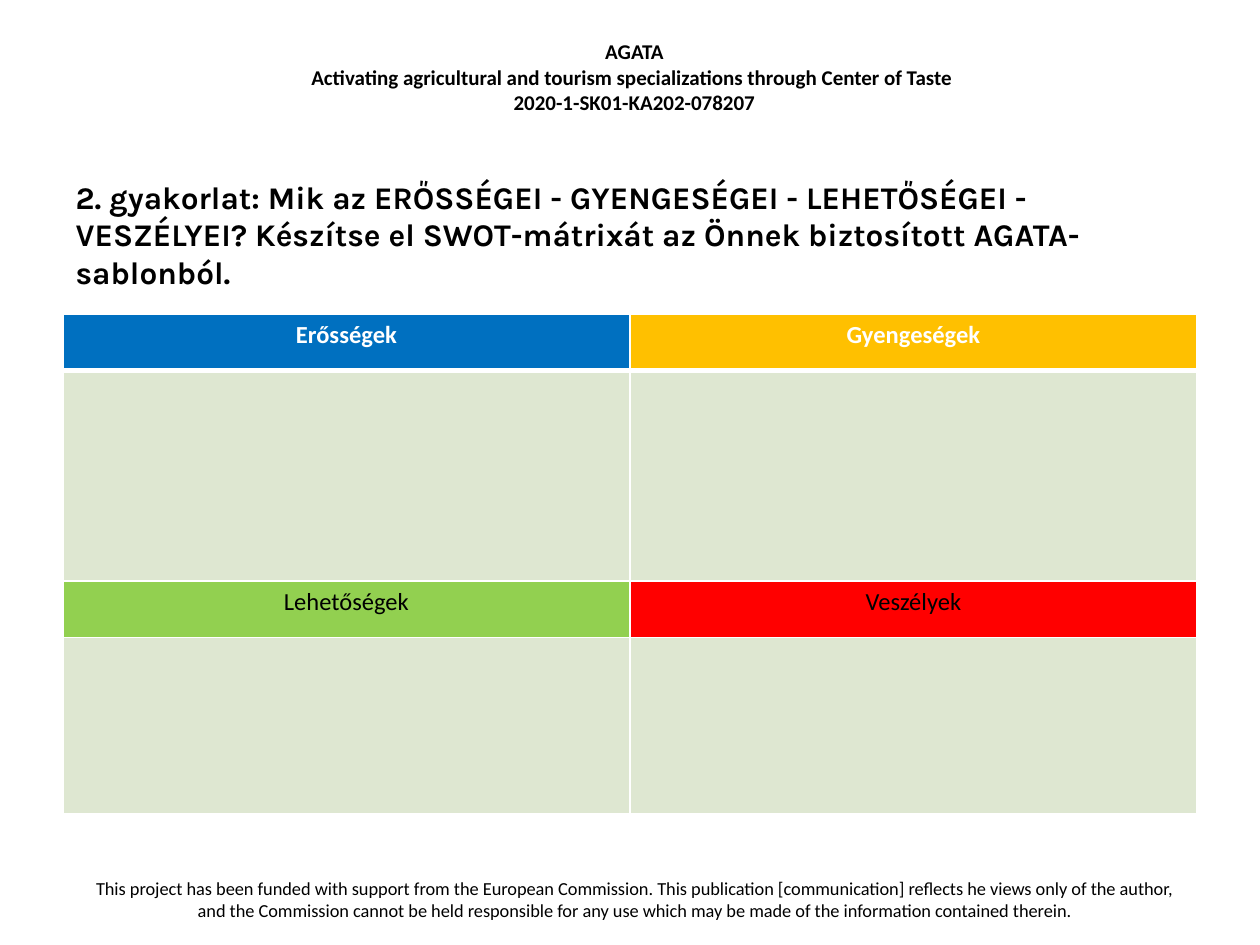
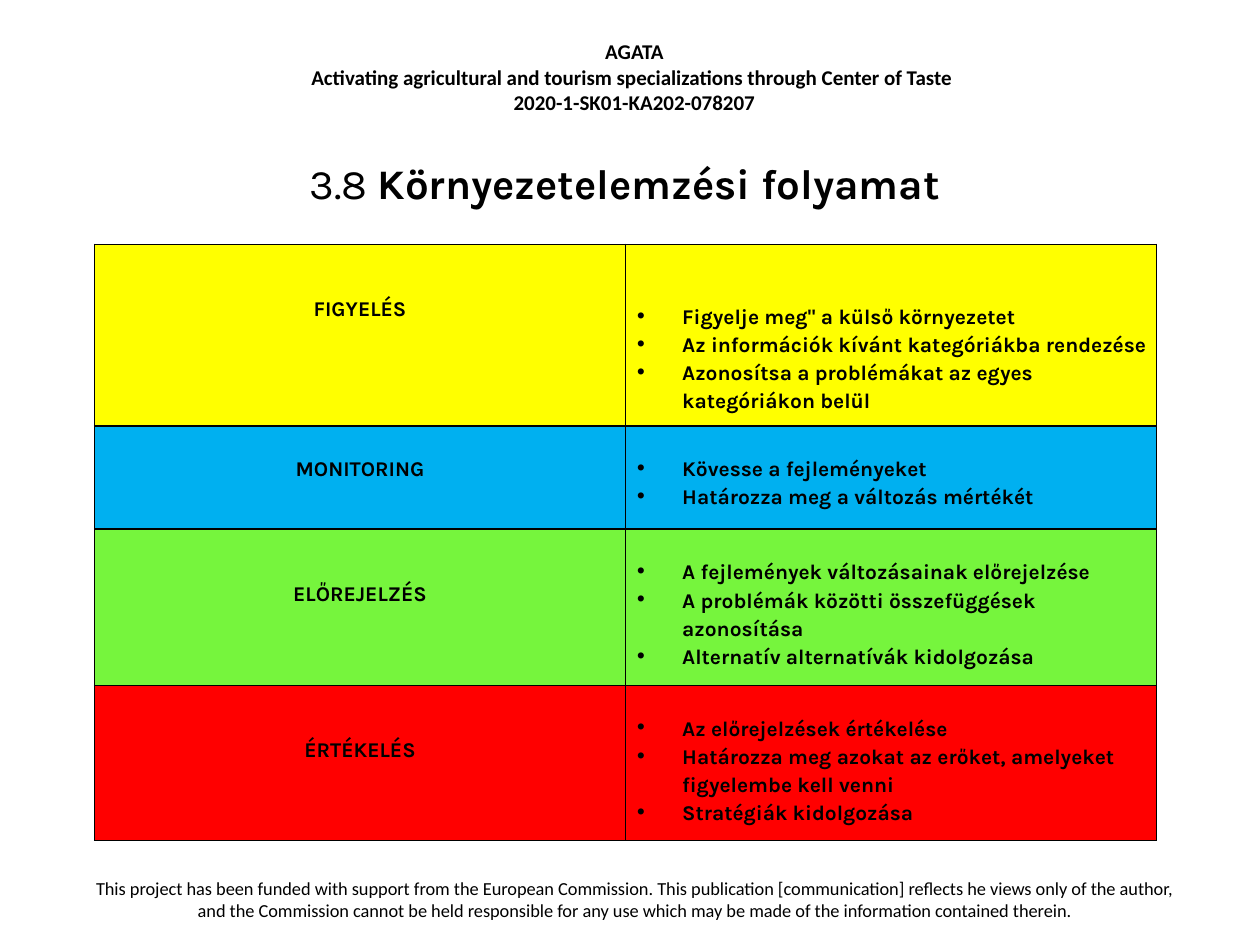
from dataclasses import dataclass

from lxml.etree import SubElement
from pptx import Presentation
from pptx.dml.color import RGBColor
from pptx.enum.text import MSO_ANCHOR, MSO_AUTO_SIZE, PP_ALIGN
from pptx.oxml import parse_xml
from pptx.oxml.ns import nsdecls, qn
from pptx.util import Inches, Pt


@dataclass(frozen=True)
class Theme:
    body_font: str = "Calibri"
    heading_font: str = "Karla"
    black: str = "000000"
    white: str = "FFFFFF"
    blue: str = "0070C0"
    amber: str = "FFC000"
    green: str = "92D050"
    red: str = "FF0000"
    sage: str = "DEE7D1"
    yellow: str = "FFFF00"
    sky: str = "00B0F0"
    lime: str = "76F53D"
    banner_size: float = 12
    notice_size: float = 10.5
    exercise_size: float = 18
    section_size: float = 24
    swot_size: float = 14
    process_size: float = 12


@dataclass(frozen=True)
class Box:
    left: float
    top: float
    width: float
    height: float

    def inches(self):
        return [Inches(n) for n in (self.left, self.top, self.width, self.height)]


THEME = Theme()
BANNER = [
    "AGATA",
    "Activating agricultural and tourism specializations through Center of Taste ",
    "2020-1-SK01-KA202-078207",
]
NOTICE = (
    "This project has been funded with support from the European Commission. "
    "This publication [communication] reflects he views only of the author, "
    "and the Commission cannot be held responsible for any use which may be made "
    "of the information contained therein."
)
SWOT = [
    [("Erősségek", THEME.blue), ("Gyengeségek", THEME.amber)],
    [("Lehetőségek", THEME.green), ("Veszélyek", THEME.red)],
]
PROCESS = [
    ("FIGYELÉS", THEME.yellow, 0.39, 0.45, [
        'Figyelje meg" a külső környezetet',
        "Az információk kívánt kategóriákba rendezése",
        "Azonosítsa a problémákat az egyes kategóriákon belül",
    ]),
    ("MONITORING", THEME.sky, 0.22, 0.22, [
        "Kövesse a fejleményeket",
        "Határozza meg a változás mértékét",
    ]),
    ("ELŐREJELZÉS", THEME.lime, 0.39, 0.22, [
        "A fejlemények változásainak előrejelzése",
        "A problémák közötti összefüggések azonosítása",
        "Alternatív alternatívák kidolgozása",
    ]),
    ("ÉRTÉKELÉS", THEME.red, 0.39, 0.22, [
        "Az előrejelzések értékelése",
        "Határozza meg azokat az erőket, amelyeket figyelembe kell venni",
        "Stratégiák kidolgozása",
    ]),
]


def add_span(para, text, size, font, bold=False, color=THEME.black):
    span = para.add_run()
    span.text = text
    span.font.size = Pt(size)
    span.font.name = font
    span.font.bold = bold
    span.font.color.rgb = RGBColor.from_string(color)


def next_para(frame, index):
    return frame.add_paragraph() if index else frame.paragraphs[0]


def add_centred_text(page, box, lines, size, bold=False):
    frame = page.shapes.add_textbox(*box.inches()).text_frame
    frame.word_wrap = True
    for index, line in enumerate(lines):
        para = next_para(frame, index)
        para.alignment = PP_ALIGN.CENTER
        add_span(para, line, size, THEME.body_font, bold)


def add_page(deck):
    page = deck.slides.add_slide(deck.slide_layouts[5])
    add_centred_text(page, Box(2.08, 0.26, 5.91, 0.71), BANNER, THEME.banner_size, True)
    add_centred_text(page, Box(0.54, 6.91, 9, 0.47), [NOTICE], THEME.notice_size)
    return page


def set_title(page, box, spans, size, alignment):
    title = page.shapes.title
    title.left, title.top, title.width, title.height = box.inches()
    frame = title.text_frame
    frame.word_wrap = True
    frame.auto_size = MSO_AUTO_SIZE.NONE
    frame.vertical_anchor = MSO_ANCHOR.MIDDLE
    para = frame.paragraphs[0]
    para.alignment = alignment
    for text, bold in spans:
        add_span(para, text, size, THEME.heading_font, bold)


def add_grid(page, box, row_heights):
    table = page.shapes.add_table(len(row_heights), 2, *box.inches()).table
    table.first_row = False
    table.horz_banding = False
    for column in table.columns:
        column.width = Inches(box.width / 2)
    for row, height in zip(table.rows, row_heights):
        row.height = Inches(height)
    return table


def style_cell(cell, fill, border, top=1, bottom=1):
    cell.fill.solid()
    cell.fill.fore_color.rgb = RGBColor.from_string(fill)
    properties = cell._tc.get_or_add_tcPr()
    sides = [("L", 1), ("R", 1), ("T", top), ("B", bottom)]
    for index, (side, width) in enumerate(sides):
        line = parse_xml(
            f'<a:ln{side} {nsdecls("a")} w="{Pt(width)}"><a:solidFill>'
            f'<a:srgbClr val="{border}"/></a:solidFill></a:ln{side}>'
        )
        properties.insert(index, line)


def add_swot_table(page, box):
    table = add_grid(page, box, [0.45, 1.67, 0.45, 1.4])
    for band, quadrants in enumerate(SWOT):
        first = band == 0
        rule = 3 if first else 1
        for column, (name, fill) in enumerate(quadrants):
            heading = table.cell(band * 2, column)
            style_cell(heading, fill, THEME.white, bottom=rule)
            para = heading.text_frame.paragraphs[0]
            para.alignment = PP_ALIGN.CENTER
            color = THEME.white if first else THEME.black
            add_span(para, name, THEME.swot_size, THEME.body_font, first, color)
            style_cell(table.cell(band * 2 + 1, column), THEME.sage, THEME.white, top=rule)


def add_bullet(para):
    properties = para._p.get_or_add_pPr()
    properties.set("marL", str(Inches(0.38)))
    properties.set("indent", str(-Inches(0.38)))
    color = SubElement(properties, qn("a:buClr"))
    SubElement(color, qn("a:srgbClr"), val=THEME.black)
    SubElement(properties, qn("a:buChar"), char="∙")


def fill_process_cell(cell, lines, fill, top, bulleted):
    style_cell(cell, fill, THEME.black)
    cell.margin_left = cell.margin_right = Inches(0.07)
    cell.margin_top = Inches(top)
    cell.margin_bottom = 0
    for index, line in enumerate(lines):
        para = next_para(cell.text_frame, index)
        if bulleted:
            add_bullet(para)
        else:
            para.alignment = PP_ALIGN.CENTER
        para.line_spacing = 1.15
        add_span(para, line, THEME.process_size, THEME.heading_font, True)


def add_process_table(page, box):
    table = add_grid(page, box, [1.44, 0.82, 1.24, 1.23])
    for row, (stage, fill, stage_top, tasks_top, tasks) in enumerate(PROCESS):
        fill_process_cell(table.cell(row, 0), [stage], fill, stage_top, False)
        fill_process_cell(table.cell(row, 1), tasks, fill, tasks_top, True)


def build_swot_page(deck):
    page = add_page(deck)
    question = (
        "2. gyakorlat: Mik az ERŐSSÉGEI - GYENGESÉGEI - LEHETŐSÉGEI - VESZÉLYEI? "
        "Készítse el SWOT-mátrixát az Önnek biztosított AGATA-sablonból."
    )
    set_title(page, Box(0.5, 1.31, 9, 1.1), [(question, True)],
              THEME.exercise_size, PP_ALIGN.LEFT)
    add_swot_table(page, Box(0.5, 2.49, 9, 3.97))


def build_process_page(deck):
    page = add_page(deck)
    spans = [("3.8 ", False), ("Környezetelemzési folyamat", True)]
    set_title(page, Box(0.46, 0.96, 9, 0.98), spans, THEME.section_size, PP_ALIGN.CENTER)
    add_process_table(page, Box(0.75, 1.94, 8.43, 4.73))


def main():
    deck = Presentation()
    deck.slide_width = Inches(10)
    deck.slide_height = Inches(7.5)
    build_swot_page(deck)
    build_process_page(deck)
    deck.save("out.pptx")


if __name__ == "__main__":
    main()
